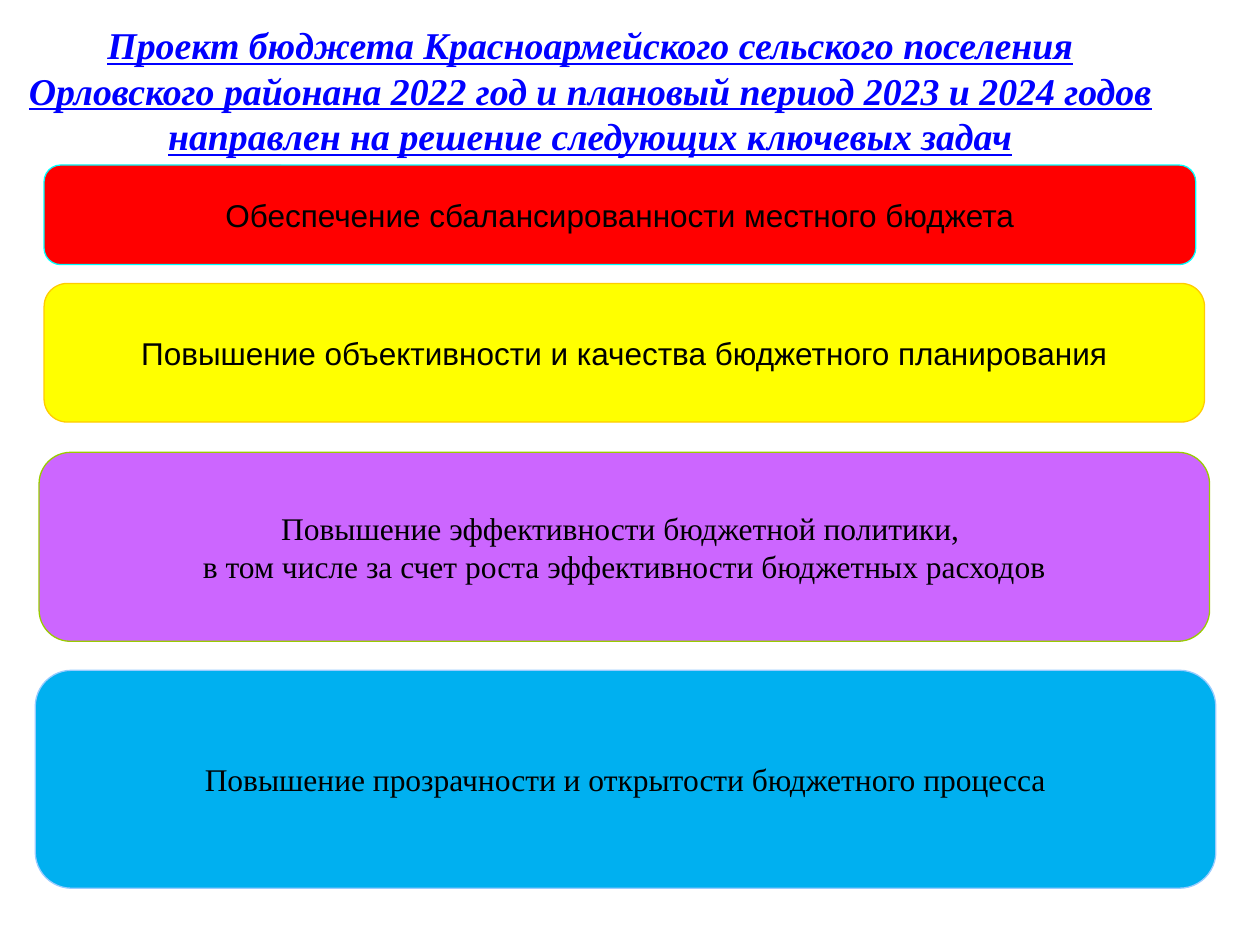
from pptx import Presentation
from pptx.dml.color import RGBColor
from pptx.enum.shapes import MSO_SHAPE as Shape
from pptx.enum.text import MSO_ANCHOR as Anchor, MSO_AUTO_SIZE as Fit, PP_ALIGN as Align
from pptx.util import Inches, Pt

BLACK = RGBColor(0x00, 0x00, 0x00)
BLUE = RGBColor(0x00, 0x00, 0xFF)
RED = RGBColor(0xFF, 0x00, 0x00)
CYAN = RGBColor(0x00, 0xFF, 0xFF)
YELLOW = RGBColor(0xFF, 0xFF, 0x00)
GOLD = RGBColor(0xFF, 0xCC, 0x00)
PURPLE = RGBColor(0xCC, 0x66, 0xFF)
GREEN = RGBColor(0x99, 0xCC, 0x00)
SKY = RGBColor(0x00, 0xB0, 0xF0)
PALE = RGBColor(0x99, 0xCC, 0xFF)

SANS, SERIF = "Arial", "Times New Roman"

TITLE = (
    "Проект бюджета Красноармейского сельского поселения "
    "Орловского районана 2022 год и плановый период 2023 и 2024 годов "
    "направлен на решение следующих ключевых задач"
)

# text, font, fill, line, (left, top, width, height)
TASKS = [
    ("Обеспечение сбалансированности местного бюджета",
     SANS, RED, CYAN, (0.35, 1.31, 9.14, 0.79)),
    ("Повышение объективности и качества бюджетного планирования",
     SANS, YELLOW, GOLD, (0.35, 2.25, 9.21, 1.1)),
    ("Повышение эффективности бюджетной политики, \n"
     "в том числе за счет роста эффективности бюджетных расходов",
     SERIF, PURPLE, GREEN, (0.31, 3.59, 9.29, 1.5)),
    ("Повышение прозрачности и открытости бюджетного процесса",
     SERIF, SKY, PALE, (0.28, 5.32, 9.37, 1.73)),
]


def write(frame, text, font=SERIF, size=18, color=BLACK, wrap=False, strong=False):
    """Fill a frame with centred text; strong means bold, italic and underlined."""
    frame.text = text
    frame.word_wrap = wrap
    frame.auto_size = Fit.NONE
    frame.vertical_anchor = Anchor.MIDDLE
    for para in frame.paragraphs:
        para.alignment = Align.CENTER
        for run in para.runs:
            face = run.font
            face.name, face.size = font, Pt(size)
            face.color.rgb = color
            face.bold = face.italic = face.underline = strong


class Deck:
    def __init__(self):
        self.show = Presentation()
        self.show.slide_width, self.show.slide_height = Inches(10), Inches(7.5)
        self.slide = self.show.slides.add_slide(self.show.slide_layouts[5])

    def title(self, text, box):
        head = self.slide.shapes.title
        head.left, head.top, head.width, head.height = map(Inches, box)
        write(head.text_frame, text, size=21.6, color=BLUE, wrap=True, strong=True)

    def card(self, text, font, fill, line, box):
        card = self.slide.shapes.add_shape(Shape.ROUNDED_RECTANGLE, *map(Inches, box))
        card.shadow.inherit = False
        card.fill.solid()
        card.fill.fore_color.rgb = fill
        card.line.color.rgb = line
        card.line.width = Pt(0.75)
        write(card.text_frame, text, font=font)


def main():
    deck = Deck()
    deck.title(TITLE, (0, 0.28, 9.37, 0.87))
    for task in TASKS:
        deck.card(*task)
    deck.show.save("out.pptx")


if __name__ == "__main__":
    main()
